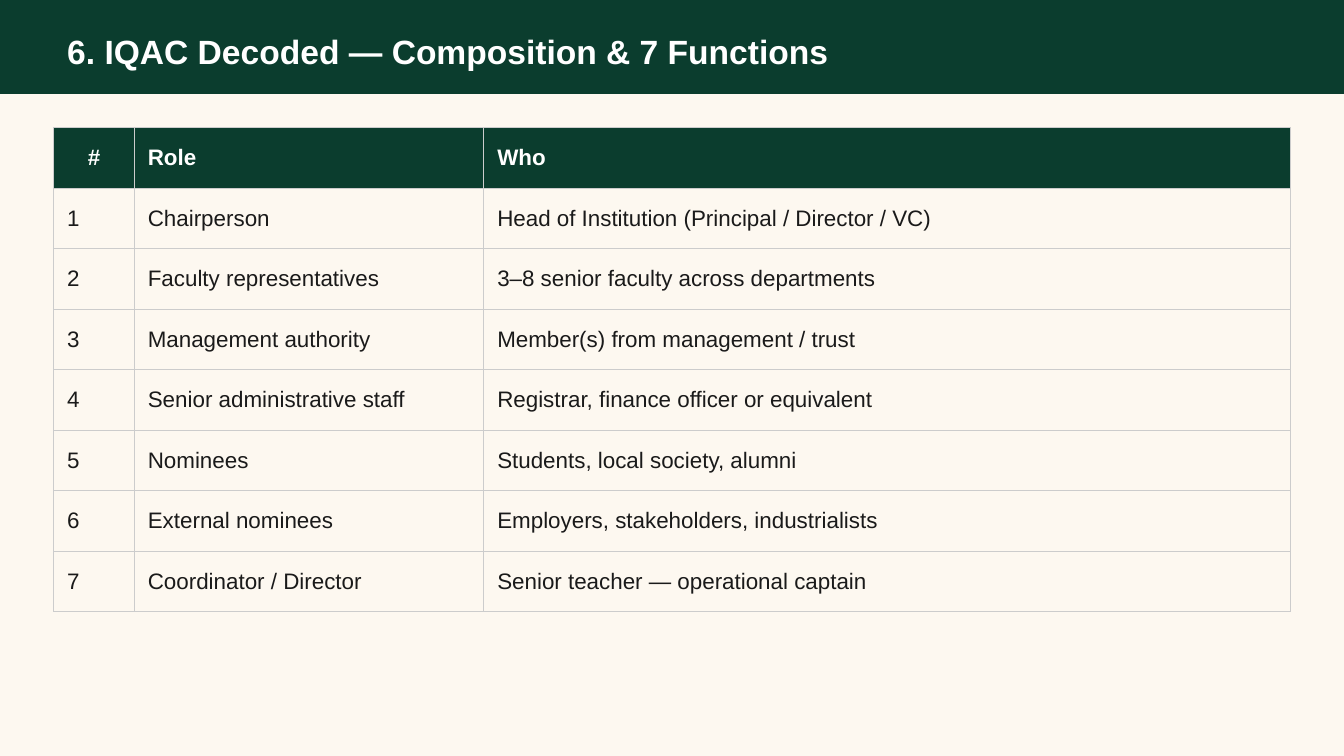
from lxml import etree
from pptx import Presentation
from pptx.dml.color import RGBColor
from pptx.enum import shapes, text
from pptx.oxml.ns import qn
from pptx.util import Pt

TITLE = "6. IQAC Decoded — Composition & 7 Functions"
HEADER = ("#", "Role", "Who")
MEMBERS = [
    ("Chairperson", "Head of Institution (Principal / Director / VC)"),
    ("Faculty representatives", "3–8 senior faculty across departments"),
    ("Management authority", "Member(s) from management / trust"),
    ("Senior administrative staff", "Registrar, finance officer or equivalent"),
    ("Nominees", "Students, local society, alumni"),
    ("External nominees", "Employers, stakeholders, industrialists"),
    ("Coordinator / Director", "Senior teacher — operational captain"),
]
COL_WIDTHS = (43.2, 187.2, 432)
ROW_HEIGHT = 32.4
MARGIN = 28.8
WIDTH, HEIGHT = 720, 405

GREEN = RGBColor(0x0B, 0x3D, 0x2E)
CREAM = RGBColor(0xFD, 0xF8, 0xF0)
WHITE = RGBColor(0xFF, 0xFF, 0xFF)
INK = RGBColor(0x1A, 0x1A, 0x1A)
GRID = RGBColor(0xCC, 0xCC, 0xCC)


def set_font(p, size, color, bold):
    p.font.name = "Arial"
    p.font.size = Pt(size)
    p.font.color.rgb = color
    p.font.bold = bold


def add_borders(cell):
    tcPr = cell._tc.get_or_add_tcPr()
    for i, side in enumerate(("lnL", "lnR", "lnT", "lnB")):
        ln = etree.Element(qn(f"a:{side}"), w=str(Pt(0.5)))
        fill = etree.SubElement(ln, qn("a:solidFill"))
        etree.SubElement(fill, qn("a:srgbClr"), val=str(GRID))
        tcPr.insert(i, ln)


def add_header(s):
    band = s.shapes.add_shape(shapes.MSO_SHAPE.RECTANGLE, 0, 0, Pt(WIDTH), Pt(50.4))
    band.shadow.inherit = False
    band.fill.solid()
    band.fill.fore_color.rgb = GREEN
    band.line.fill.background()

    title = s.shapes.title
    title.left, title.top = Pt(MARGIN), Pt(12.96)
    title.width, title.height = Pt(648), Pt(28.8)
    band._element.addnext(title._element)
    tf = title.text_frame
    tf.text = TITLE
    tf.word_wrap = True
    tf.auto_size = text.MSO_AUTO_SIZE.NONE
    tf.vertical_anchor = text.MSO_ANCHOR.MIDDLE
    p = tf.paragraphs[0]
    p.alignment = text.PP_ALIGN.LEFT
    set_font(p, 18, WHITE, True)


def add_members(s):
    rows = [HEADER] + [(str(n), *m) for n, m in enumerate(MEMBERS, 1)]
    table = s.shapes.add_table(
        len(rows), len(HEADER), Pt(MARGIN), Pt(68.4),
        Pt(sum(COL_WIDTHS)), Pt(ROW_HEIGHT * len(rows))).table
    table.horz_banding = False
    table.first_row = False
    for col, width in zip(table.columns, COL_WIDTHS):
        col.width = Pt(width)
    for r, values in enumerate(rows):
        table.rows[r].height = Pt(ROW_HEIGHT)
        for c, value in enumerate(values):
            cell = table.cell(r, c)
            cell.text = value
            cell.vertical_anchor = text.MSO_ANCHOR.MIDDLE
            head = r == 0
            if head:
                cell.fill.solid()
                cell.fill.fore_color.rgb = GREEN
            else:
                cell.fill.background()
            add_borders(cell)
            p = cell.text_frame.paragraphs[0]
            p.alignment = text.PP_ALIGN.CENTER if head and c == 0 else text.PP_ALIGN.LEFT
            set_font(p, 12, WHITE if head else INK, head)


def main():
    prs = Presentation()
    prs.slide_width, prs.slide_height = Pt(WIDTH), Pt(HEIGHT)
    s = prs.slides.add_slide(prs.slide_layouts[5])
    s.background.fill.solid()
    s.background.fill.fore_color.rgb = CREAM
    add_header(s)
    add_members(s)
    prs.save("out.pptx")


if __name__ == "__main__":
    main()
